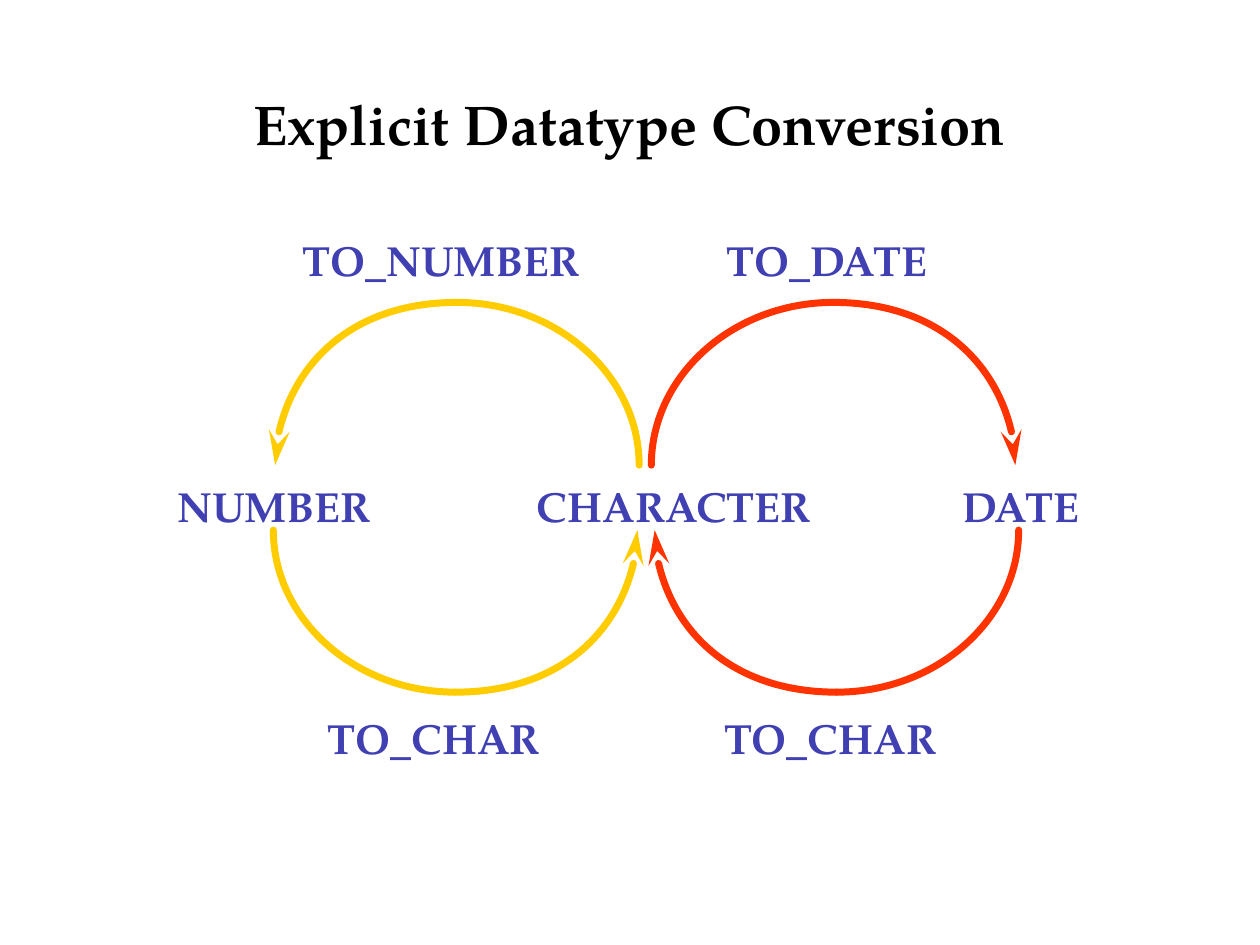
from lxml import etree
from pptx import Presentation
from pptx.dml.color import RGBColor
from pptx.enum.text import PP_ALIGN
from pptx.oxml.ns import qn
from pptx.util import Pt

CENTER = PP_ALIGN.CENTER
FONT = "TeX Gyre Pagella"

BLACK = RGBColor(0x00, 0x00, 0x00)
INDIGO = RGBColor(0x40, 0x40, 0xB3)
YELLOW = RGBColor(0xFF, 0xCC, 0x00)
RED = RGBColor(0xFF, 0x33, 0x00)

ARC_RADIUS = 104
UPPER_BASE, UPPER_APEX = 265.8, 172.8
LOWER_BASE, LOWER_APEX = 302.9, 395.5
CURVATURE = 0.55
LABEL_WIDTH, LABEL_HEIGHT = 205.2, 36.7
FUNCTION_TOP, TYPE_TOP, TO_CHAR_TOP = 130.3, 271.1, 403.5


def add_label(slide, text, left, top, width=LABEL_WIDTH, height=LABEL_HEIGHT,
              size=24, color=INDIGO):
    label = slide.shapes.add_textbox(Pt(left), Pt(top), Pt(width), Pt(height))
    label.text_frame.word_wrap = True
    label.text_frame.text = text
    paragraph = label.text_frame.paragraphs[0]
    paragraph.alignment = CENTER
    font = paragraph.runs[0].font
    font.name = FONT
    font.size = Pt(size)
    font.bold = True
    font.color.rgb = color


def bend_to_quarter_ellipse(line_segment):
    start, end = line_segment.getprevious()[0], line_segment[0]
    start_x, start_y = int(start.get("x")), int(start.get("y"))
    end_x, end_y = int(end.get("x")), int(end.get("y"))
    curve = etree.Element(qn("a:cubicBezTo"))
    for x, y in ((start_x, start_y + CURVATURE * (end_y - start_y)),
                 (end_x + CURVATURE * (start_x - end_x), end_y),
                 (end_x, end_y)):
        etree.SubElement(curve, qn("a:pt"), x=str(round(x)), y=str(round(y)))
    line_segment.getparent().replace(line_segment, curve)


def add_quarter_arc(slide, side_x, base_y, apex_x, apex_y, color, has_arrow):
    builder = slide.shapes.build_freeform(Pt(side_x), Pt(base_y))
    builder.add_line_segments([(Pt(apex_x), Pt(apex_y))], close=False)
    arc = builder.convert_to_shape()
    bend_to_quarter_ellipse(next(arc._element.iter(qn("a:lnTo"))))
    arc.shadow.inherit = False
    arc.fill.background()
    arc.line.color.rgb = color
    arc.line.width = Pt(4)
    outline = arc.line._get_or_add_ln()
    outline.set("cap", "rnd")
    etree.SubElement(outline, qn("a:round"))
    if has_arrow:
        etree.SubElement(outline, qn("a:headEnd"), type="stealth", w="med", len="lg")


def add_conversion_arc(slide, center_x, base_y, apex_y, color, arrow_side):
    for side in (-1, 1):
        add_quarter_arc(slide, center_x + side * ARC_RADIUS, base_y,
                        center_x, apex_y, color, side == arrow_side)


def add_conversion_pair(slide, upper_center, lower_center, color, upper_arrow_side):
    add_conversion_arc(slide, upper_center, UPPER_BASE, UPPER_APEX, color, upper_arrow_side)
    add_conversion_arc(slide, lower_center, LOWER_BASE, LOWER_APEX, color, -upper_arrow_side)


def main():
    presentation = Presentation()
    presentation.slide_width = Pt(720)
    presentation.slide_height = Pt(540)
    slide = presentation.slides.add_slide(presentation.slide_layouts[6])

    add_label(slide, "Explicit Datatype Conversion", 72.5, 47.5, 574.6, 69.1, 32, BLACK)

    add_conversion_pair(slide, 261.2, 260.2, YELLOW, -1)
    add_conversion_pair(slide, 476.2, 478.1, RED, 1)

    add_label(slide, "NUMBER", 54, TYPE_TOP)
    add_label(slide, "CHARACTER", 282.4, TYPE_TOP)
    add_label(slide, "DATE", 514.8, TYPE_TOP, 136.8)

    add_label(slide, "TO_NUMBER", 149.4, FUNCTION_TOP)
    add_label(slide, "TO_DATE", 369.9, FUNCTION_TOP)
    add_label(slide, "TO_CHAR", 145.4, TO_CHAR_TOP)
    add_label(slide, "TO_CHAR", 371.9, TO_CHAR_TOP)

    presentation.save("out.pptx")


if __name__ == "__main__":
    main()
